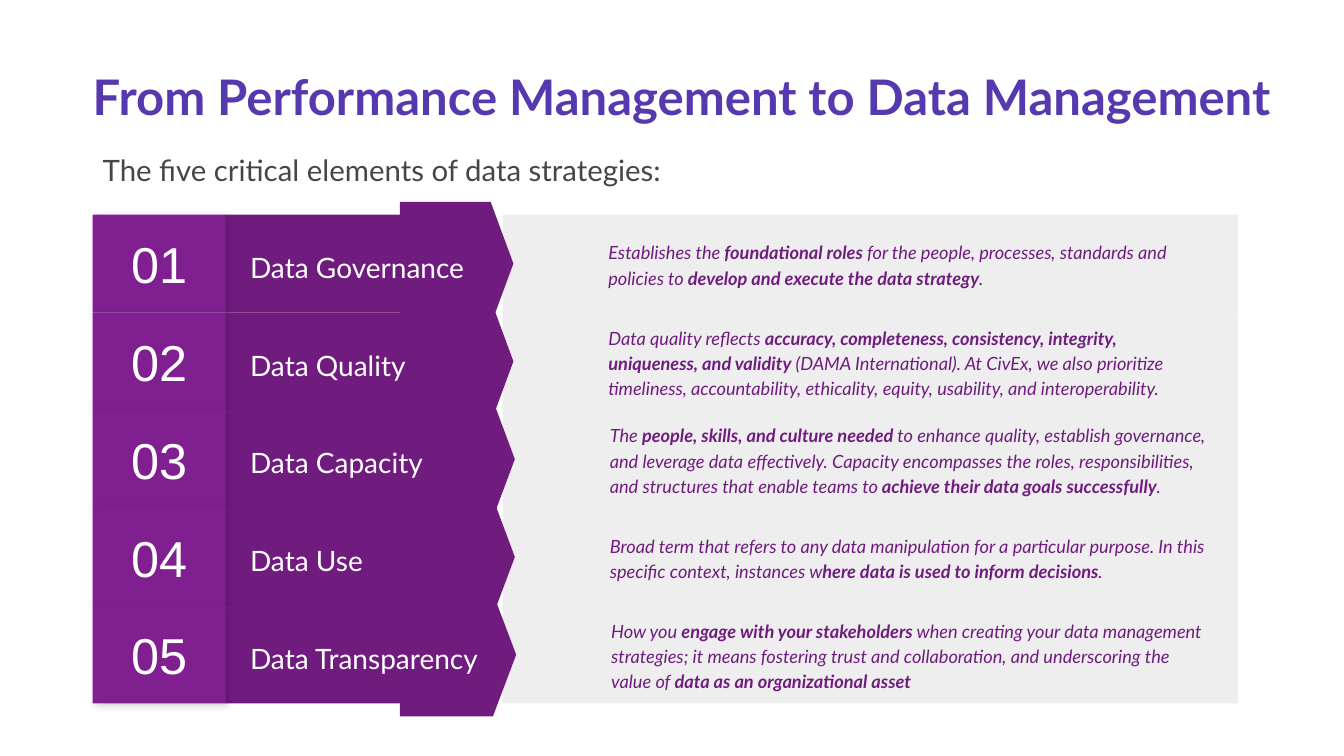
from dataclasses import dataclass

from lxml.etree import SubElement
from pptx import Presentation
from pptx.dml.color import RGBColor
from pptx.enum.shapes import MSO_SHAPE
from pptx.enum.text import MSO_ANCHOR, MSO_AUTO_SIZE, PP_ALIGN
from pptx.oxml.ns import qn
from pptx.util import Pt


@dataclass(frozen=True)
class Theme:
    title: str = "5639AF"
    subtitle: str = "444746"
    dark: str = "701C7F"
    number: str = "802090"
    panel: str = "EEEEEE"
    white: str = "FFFFFF"
    shadow: str = "000000"
    font: str = "Lato"
    number_font: str = "Arial"
    title_size: int = 35
    subtitle_size: int = 21
    number_size: int = 36
    label_size: int = 20
    body_size: int = 13


T = Theme()

# Element name and description; ** switches bold on and off
ELEMENTS = [
    ("Data Governance",
     "Establishes the **foundational roles** for the people, processes, standards "
     "and policies to **develop and execute the data strategy**."),
    ("Data Quality",
     "Data quality reflects **accuracy, completeness, consistency, integrity, "
     "uniqueness, and validity** (DAMA International). At CivEx, we also prioritize "
     "timeliness, accountability, ethicality, equity, usability, and interoperability."),
    ("Data Capacity",
     "The **people, skills, and culture needed** to enhance quality, establish "
     "governance, and leverage data effectively. Capacity encompasses the roles, "
     "responsibilities, and structures that enable teams to **achieve their data "
     "goals successfully**."),
    ("Data Use",
     "Broad term that refers to any data manipulation for a particular purpose. In "
     "this specific context, instances w**here data is used to inform decisions**."),
    ("Data Transparency",
     "How you **engage with your stakeholders **when creating your data management "
     "strategies; it means fostering trust and collaboration, and underscoring the "
     "value of **data as an organizational asset**"),
]


def style(font, size, color, name=T.font):
    font.name, font.size = name, Pt(size)
    font.color.rgb = RGBColor.from_string(color)


def frame(sp, inset, anchor=MSO_ANCHOR.MIDDLE):
    tf = sp.text_frame
    tf.word_wrap, tf.vertical_anchor = True, anchor
    tf.margin_left = tf.margin_right = tf.margin_top = tf.margin_bottom = Pt(inset)
    return tf


def add_block(shapes, kind, x, y, w, h, color):
    sp = shapes.add_shape(kind, Pt(x), Pt(y), Pt(w), Pt(h))
    sp.shadow.inherit = False
    sp.fill.solid()
    sp.fill.fore_color.rgb = RGBColor.from_string(color)
    sp.line.fill.background()
    return sp


def add_text(shapes, x, y, w, h, inset=9.36, anchor=MSO_ANCHOR.MIDDLE):
    return frame(shapes.add_textbox(Pt(x), Pt(y), Pt(w), Pt(h)), inset, anchor)


def add_soft_shadow(sp):
    effects = sp._element.spPr.find(qn("a:effectLst"))
    shadow = SubElement(effects, qn("a:outerShdw"), blurRad=str(Pt(5.6)),
                        dist=str(Pt(2.2)), dir="2700000", algn="tl", rotWithShape="0")
    color = SubElement(shadow, qn("a:srgbClr"), val=T.shadow)
    SubElement(color, qn("a:alpha"), val="17000")


def add_heading(s, x, y, w, h):
    # Title
    title = s.shapes.title
    title.left, title.top, title.width, title.height = Pt(x), Pt(y), Pt(w), Pt(62)
    tf = frame(title, 0, MSO_ANCHOR.BOTTOM)
    tf.auto_size = MSO_AUTO_SIZE.NONE
    p = tf.paragraphs[0]
    p.text = "From Performance Management to Data Management"
    p.alignment = PP_ALIGN.LEFT
    style(p.font, T.title_size, T.title)
    p.font.bold = True

    # Subtitle
    tf = add_text(s.shapes, x, y + h - 40, 538.5, 40, 7.2, MSO_ANCHOR.TOP)
    p = tf.paragraphs[0]
    p.text = "The five critical elements of data strategies:"
    style(p.font, T.subtitle_size, T.subtitle)


def add_element_row(s, x, y, w, h, index, label, description):
    shapes = s.shapes.add_group_shape().shapes
    shift = index // 2  # the arrow tips creep right every second row

    # Panel, dark band and arrow
    add_block(shapes, MSO_SHAPE.RECTANGLE, x + 293, y, w - 293, h, T.panel)
    add_block(shapes, MSO_SHAPE.RECTANGLE, x + 94.5, y, 157, h, T.dark)
    across, length = 88, 81 + shift
    mid_x, mid_y = x + 219.5 + length / 2, y + h / 2
    arrow = add_block(shapes, MSO_SHAPE.FLOWCHART_OFFPAGE_CONNECTOR,
                      mid_x - across / 2, mid_y - length / 2, across, length, T.dark)
    arrow.rotation = 270

    # Element name
    p = add_text(shapes, x + 103, y + 8.6, 203, 54).paragraphs[0]
    p.text = label
    p.line_spacing = 1.15
    style(p.font, T.label_size, T.white)

    # Number
    tile = add_block(shapes, MSO_SHAPE.RECTANGLE, x, y, 95, h, T.number)
    add_soft_shadow(tile)
    p = frame(tile, 9.36).paragraphs[0]
    p.text = f"{index + 1:02d}"
    p.alignment = PP_ALIGN.CENTER
    style(p.font, T.number_size, T.white, T.number_font)

    # Description
    left = 311 + shift
    p = add_text(shapes, x + left, y, w - 11 - left, h).paragraphs[0]
    p._p.get_or_add_pPr().set("marL", str(Pt(48)))
    p.line_spacing = 1.15
    for i, part in enumerate(description.split("**")):
        if part:
            r = p.add_run()
            r.text = part
            style(r.font, T.body_size, T.dark)
            r.font.italic, r.font.bold = True, i % 2 == 1


def main():
    prs = Presentation()
    prs.slide_width, prs.slide_height = Pt(960), Pt(540)
    s = prs.slides.add_slide(prs.slide_layouts[5])
    left, top, row_height = 66.24, 153.36, 69.84
    add_heading(s, left, 27.36, 877, 114)
    for i, (label, description) in enumerate(ELEMENTS):
        add_element_row(s, left, top + i * row_height, 818, row_height,
                        i, label, description)
    prs.save("out.pptx")


if __name__ == "__main__":
    main()
